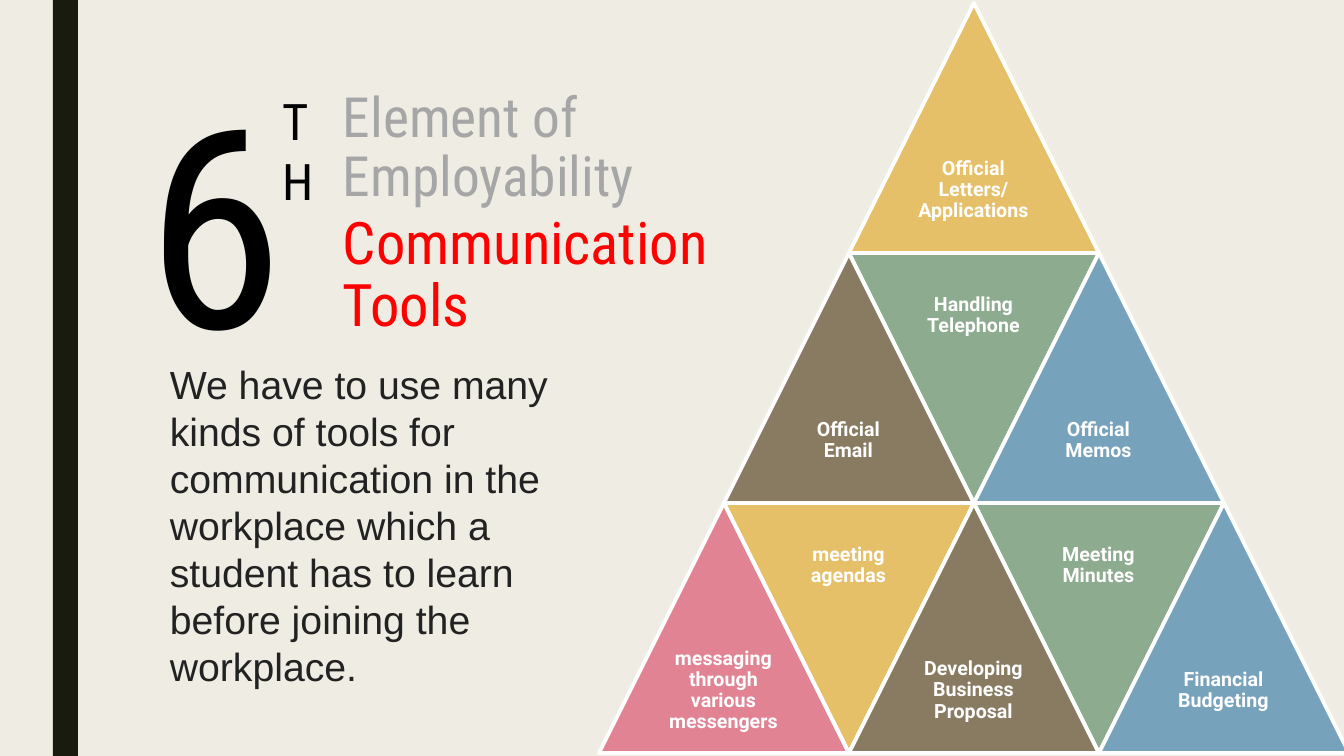
from pptx import Presentation
from pptx.dml.color import RGBColor
from pptx.enum.shapes import MSO_SHAPE
from pptx.enum.text import MSO_ANCHOR, PP_ALIGN
from pptx.util import Emu, Pt

PX = 914400 / 100.8
RECT = MSO_SHAPE.RECTANGLE
TRI = MSO_SHAPE.ISOSCELES_TRIANGLE
TOP, MID = MSO_ANCHOR.TOP, MSO_ANCHOR.MIDDLE
LEFT, MIDST = PP_ALIGN.LEFT, PP_ALIGN.CENTER

PAPER = RGBColor(0xEF, 0xED, 0xE3)
DARK = RGBColor(0x19, 0x1B, 0x0E)
BLACK = RGBColor(0x00, 0x00, 0x00)
INK = RGBColor(0x22, 0x22, 0x22)
GREY = RGBColor(0xA6, 0xA6, 0xA6)
RED = RGBColor(0xFF, 0x00, 0x00)
WHITE = RGBColor(0xFF, 0xFF, 0xFF)
GOLD = RGBColor(0xE6, 0xC0, 0x69)
BROWN = RGBColor(0x89, 0x7B, 0x61)
GREEN = RGBColor(0x8D, 0xAB, 0x8E)
BLUE = RGBColor(0x77, 0xA2, 0xBB)
PINK = RGBColor(0xE2, 0x83, 0x94)

deck = Presentation()
deck.slide_width, deck.slide_height = Emu(round(1344 * PX)), Emu(round(756 * PX))
slide = deck.slides.add_slide(deck.slide_layouts[6])
slide.background.fill.solid()
slide.background.fill.fore_color.rgb = PAPER


def add_form(kind, box, fill):
    form = slide.shapes.add_shape(kind, *[Emu(round(n * PX)) for n in box])
    form.shadow.inherit = False
    form.fill.solid()
    form.fill.fore_color.rgb = fill
    form.line.fill.background()
    return form


def add_text(text, box, size, font, color, space=1.0, bold=False,
             align=LEFT, anchor=TOP, pad=None):
    frame = slide.shapes.add_textbox(*[Emu(round(n * PX)) for n in box]).text_frame
    frame.word_wrap = True
    frame.vertical_anchor = anchor
    if pad is not None:
        for side in ("left", "right", "top", "bottom"):
            setattr(frame, "margin_" + side, Emu(round(pad * PX)))
    para = frame.paragraphs[0]
    para.text = text
    para.alignment = align
    para.line_spacing = space
    style = {"size": Pt(size), "name": font, "bold": bold}
    for run in para.runs:
        for key, value in style.items():
            setattr(run.font, key, value)
        run.font.color.rgb = color


add_form(RECT, (53, 0, 25, 756), DARK)

HEAD = "Roboto Condensed"
add_text("6", (137, 45, 171, 348), 199, HEAD, BLACK)
add_text("We have to use many kinds of tools for communication in the workplace "
         "which a student has to learn before joining the workplace.",
         (160, 355, 442, 343), 28, "Arial", INK)
add_text("Element of\vEmployability", (333, 85, 339, 149), 39.6, HEAD, GREY, 0.89)
add_text("Communication Tools", (333, 209, 406, 149), 41.9, HEAD, RED, 0.89)
add_text("T\vH", (273, 85, 73, 132), 36, HEAD, BLACK)

SIDE, HALF, PEAK = 250, 125, 849
rows = [
    [("Official Letters/ Applications", GOLD)],
    [("Official Email", BROWN), ("Handling Telephone", GREEN), ("Official Memos", BLUE)],
    [("messaging through various messengers", PINK), ("meeting agendas", GOLD),
     ("Developing Business Proposal", BROWN), ("Meeting Minutes", GREEN),
     ("Financial Budgeting", BLUE)],
]
for row, cells in enumerate(rows):
    top = 3 + row * SIDE
    for col, (label, fill) in enumerate(cells):
        left = PEAK + (col - row) * HALF
        down = col % 2 == 1
        tri = add_form(TRI, (left, top, SIDE, SIDE), fill)
        tri.rotation = 180 if down else 0
        tri.line.color.rgb = WHITE
        tri.line.width = Pt(2.75)
        add_text(label, (left + 62, top if down else top + HALF, HALF, HALF),
                 14, "Roboto", WHITE, 0.9, True, MIDST, MID, 6)

deck.save("out.pptx")
